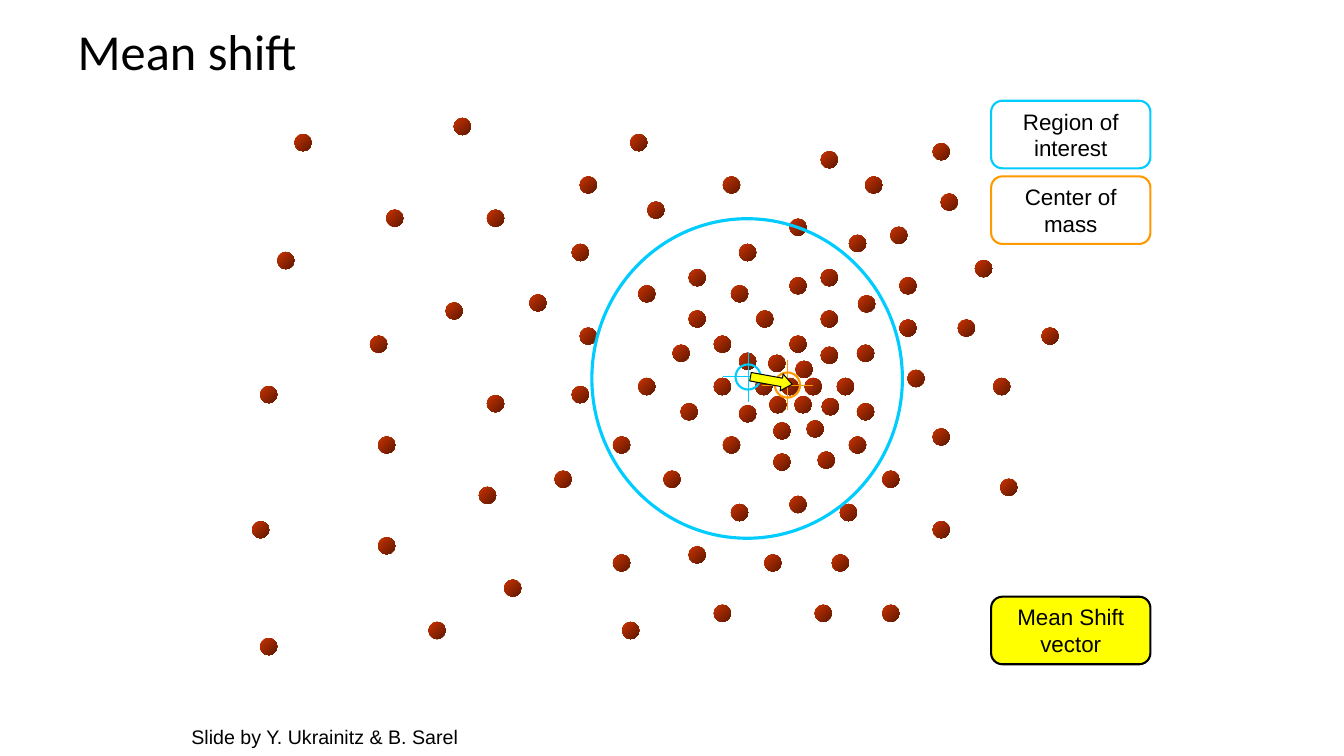
import pptx
import pptx.dml.color
import pptx.enum.shapes
import pptx.enum.text
import pptx.oxml
import pptx.util
from pptx.util import Inches

SHAPE = pptx.enum.shapes.MSO_SHAPE
ALIGN = pptx.enum.text.PP_ALIGN
ANCHOR = pptx.enum.text.MSO_ANCHOR
AUTO_SIZE = pptx.enum.text.MSO_AUTO_SIZE

BLUE, ORANGE, YELLOW, BLACK = "00CCFF", "FF9900", "FFFF00", "000000"
DOT_SIZE = 0.17

# Left and top of each data point
DATA_POINTS = [
    (7.75, 3.75), (7.98, 3.75), (7.89, 3.58), (7.62, 3.52), (7.88, 3.93),
    (7.63, 3.93), (8.15, 3.95), (7.49, 3.75), (8.3, 3.75), (8.14, 3.44),
    (7.83, 3.33), (8, 4.17), (7.67, 4.19), (7.33, 4.02), (7.08, 3.75),
    (7.33, 3.5), (8.5, 4), (8.42, 4.33), (8.11, 4.48), (7.67, 4.5),
    (7.17, 4.33), (6.75, 4), (6.67, 3.42), (7.08, 3.33), (7.5, 3.08),
    (8.14, 3.08), (7.83, 2.75), (6.83, 3.08), (7.25, 2.83), (7.83, 2.17),
    (7.33, 2.42), (8.14, 2.67), (8.14, 1.5), (8.42, 2.33), (8.51, 2.93),
    (8.5, 3.42), (8.92, 3.17), (8.92, 2.75), (8.83, 2.25), (8.58, 1.75),
    (9.25, 1.42), (9.33, 1.92), (9.67, 2.58), (9, 3.67), (9.5, 3.17),
    (10.33, 3.25), (9.25, 4.25), (9.85, 3.75), (8.75, 4.67), (9.92, 4.75),
    (9.25, 5.17), (8.33, 5), (7.83, 4.92), (8.25, 5.5), (8.75, 6),
    (8.08, 6), (7.58, 5.5), (7.25, 5), (6.58, 4.67), (6.83, 5.42),
    (7.08, 6), (6.17, 6.17), (6.08, 5.5), (5.5, 4.67), (6.08, 4.33),
    (6.33, 3.75), (5.75, 3.25), (6.33, 2.83), (6.83, 2.67), (6.42, 2),
    (7.17, 1.75), (6.25, 1.33), (5.75, 1.75), (5.67, 2.42), (5.25, 2.92),
    (5.67, 3.83), (4.83, 3.92), (4.75, 4.83), (5, 5.75), (4.25, 6.17),
    (3.75, 5.33), (3.75, 4.33), (4.42, 3), (4.83, 2.08), (3.83, 2.08),
    (3.67, 3.33), (2.5, 5.17), (2.58, 6.33), (2.58, 3.83), (2.75, 2.5),
    (2.92, 1.33), (4.5, 1.17),
]


def rgb(hex_colour):
    return pptx.dml.color.RGBColor.from_string(hex_colour)


class MeanShiftSlide:
    def __init__(self, presentation):
        self.slide = presentation.slides.add_slide(presentation.slide_layouts[5])
        self.shapes = self.slide.shapes

    def style_text(self, paragraph, size, font="Arial", align=ALIGN.LEFT):
        paragraph.alignment = align
        paragraph.font.name = font
        paragraph.font.size = pptx.util.Pt(size)
        paragraph.font.color.rgb = rgb(BLACK)

    def title(self, text, left, top, width, height):
        heading = self.shapes.title
        heading.left, heading.top = Inches(left), Inches(top)
        heading.width, heading.height = Inches(width), Inches(height)
        frame = heading.text_frame
        frame.text = text
        frame.auto_size = AUTO_SIZE.NONE
        frame.vertical_anchor = ANCHOR.MIDDLE
        self.style_text(frame.paragraphs[0], 36, "Calibri")

    def shape(self, kind, left, top, width, height, fill=None, line=None,
              weight=1.5, parent=None):
        shape = (parent or self.shapes).add_shape(
            kind, Inches(left), Inches(top), Inches(width), Inches(height))
        shape.shadow.inherit = False
        if fill:
            shape.fill.solid()
            shape.fill.fore_color.rgb = rgb(fill)
        else:
            shape.fill.background()
        if line:
            shape.line.color.rgb = rgb(line)
            shape.line.width = pptx.util.Pt(weight)
        else:
            shape.line.fill.background()
        return shape

    def dot(self, left, top):
        dot = self.shape(SHAPE.OVAL, left, top, DOT_SIZE, DOT_SIZE)
        dot.fill.gradient()
        dot.fill.gradient_angle = 315
        for stop, colour in zip(dot.fill.gradient_stops, ("CC3300", "5E1800")):
            stop.color.rgb = rgb(colour)

    def hairline(self, parent, colour, x1, y1, x2, y2):
        line = parent.add_connector(
            pptx.enum.shapes.MSO_CONNECTOR.STRAIGHT,
            Inches(x1), Inches(y1), Inches(x2), Inches(y2))
        line.line.color.rgb = rgb(colour)
        line.line.width = pptx.util.Pt(0.75)
        properties = line._element.spPr
        properties.append(properties.makeelement(
            pptx.oxml.ns.qn("a:effectLst"), {}))

    def target(self, x, y, colour, region=None):
        """Crosshair centred on (x, y), optionally inside a wide region."""
        parts = self.shapes.add_group_shape().shapes
        if region:
            self.shape(SHAPE.OVAL, *region, line=colour, weight=2.25, parent=parts)
        ring, arm = 0.25, 0.25
        self.shape(SHAPE.OVAL, x - ring / 2, y - ring / 2, ring, ring,
                   line=colour, parent=parts)
        self.hairline(parts, colour, x, y - arm, x, y + arm)
        self.hairline(parts, colour, x - arm, y, x + arm, y)

    def label(self, text, top, line, fill=None):
        box = self.shape(SHAPE.ROUNDED_RECTANGLE, 9.83, top, 1.58, 0.67, fill, line)
        frame = box.text_frame
        frame.word_wrap = False
        frame.vertical_anchor = ANCHOR.MIDDLE
        frame.text = text
        for paragraph in frame.paragraphs:
            self.style_text(paragraph, 16, align=ALIGN.CENTER)

    def shift_arrow(self, left, top, width, height, rotation):
        arrow = self.shape(SHAPE.RIGHT_ARROW, left, top, width, height,
                           YELLOW, BLACK, 0.75)
        arrow.adjustments[1] = 0.625
        arrow.rotation = rotation

    def credit(self, text, left, top, width, height):
        box = self.shapes.add_textbox(
            Inches(left), Inches(top), Inches(width), Inches(height))
        frame = box.text_frame
        frame.word_wrap = False
        frame.auto_size = AUTO_SIZE.SHAPE_TO_FIT_TEXT
        frame.text = text
        self.style_text(frame.paragraphs[0], 14)


def main():
    presentation = pptx.Presentation()
    presentation.slide_width = Inches(13.33)
    presentation.slide_height = Inches(7.5)
    slide = MeanShiftSlide(presentation)

    slide.title("Mean shift", 0.67, 0, 12, 1)

    # Data points
    for left, top in DATA_POINTS:
        slide.dot(left, top)

    # Region of interest and legend
    slide.target(7.42, 3.74, BLUE, region=(5.87, 2.17, 3.08, 3.17))
    slide.label("Region of\ninterest", 1, BLUE)
    slide.label("Center of\nmass", 1.75, ORANGE)
    slide.label("Mean Shift\nvector", 5.92, BLACK, YELLOW)

    # Center of mass and the shift towards it
    slide.target(7.81, 3.82, ORANGE)
    slide.shift_arrow(7.44, 3.69, 0.42, 0.17, 10.3)

    slide.credit("Slide by Y. Ukrainitz & B. Sarel", 1.8, 7.14, 2.87, 0.33)
    presentation.save("out.pptx")


if __name__ == "__main__":
    main()
